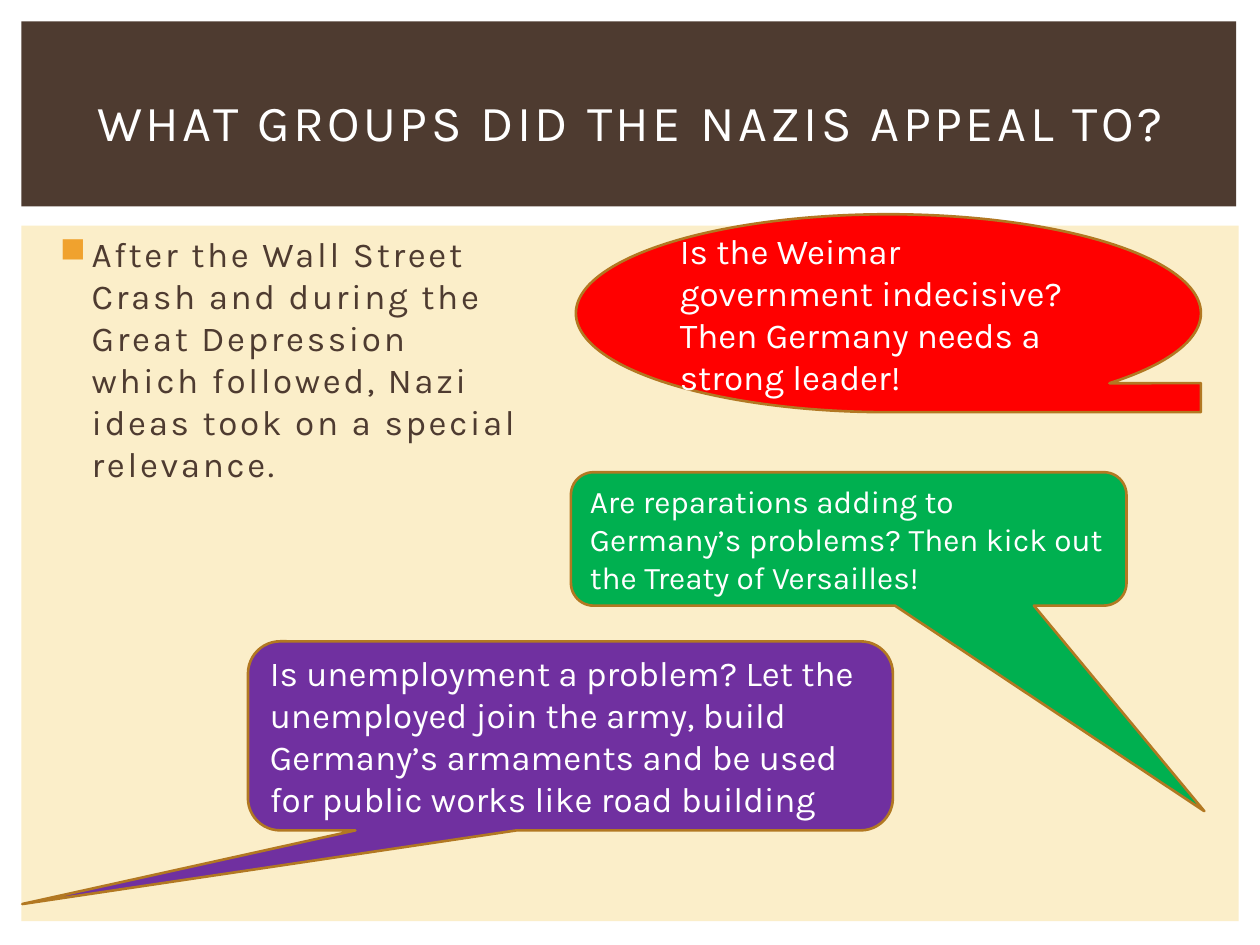
from collections import namedtuple

from lxml.etree import SubElement
from pptx import Presentation
from pptx.dml.color import RGBColor as RGB
from pptx.enum.shapes import MSO_SHAPE as SHAPE
from pptx.enum.text import MSO_ANCHOR as ANCHOR, PP_ALIGN as ALIGN
from pptx.oxml.ns import qn
from pptx.util import Cm, Pt

Theme = namedtuple("Theme", "font brown cream white amber outline red purple green "
                            "title_size body_size small_size")
theme = Theme("Karla", "4E3B30", "FBEEC9", "FFFFFF", "F0A22E", "B27822",
              "FF0000", "7030A0", "00B050", 28.8, 20, 18)

deck = Presentation()
deck.slide_width, deck.slide_height = Cm(25.4), Cm(19.05)
slide = deck.slides.add_slide(deck.slide_layouts[6])


def add_block(kind, box, fill, outline=None):
    block = slide.shapes.add_shape(kind, *map(Cm, box))
    block.shadow.inherit = False
    block.fill.solid()
    block.fill.fore_color.rgb = RGB.from_string(fill)
    if outline:
        block.line.color.rgb = RGB.from_string(outline)
        block.line.width = Pt(1.5)
    else:
        block.line.fill.background()
    return block


def write(holder, words, size, color, anchor, align=ALIGN.LEFT, spacing=0):
    frame = holder.text_frame
    frame.word_wrap = True
    frame.vertical_anchor = anchor
    paragraph = frame.paragraphs[0]
    paragraph.alignment = align
    run = paragraph.add_run()
    run.text = words
    run.font.name = theme.font
    run.font.size = Pt(size)
    run.font.color.rgb = RGB.from_string(color)
    if spacing:
        run.font._element.set("spc", str(int(spacing * 100)))
    return paragraph


add_block(SHAPE.RECTANGLE, (0.43, 4.55, 24.54, 14.02), theme.cream)
add_block(SHAPE.RECTANGLE, (0.43, 0.43, 24.49, 3.73), theme.brown)

title = slide.shapes.add_textbox(Cm(1.07), Cm(0.99), Cm(23.29), Cm(2.92))
write(title, "WHAT GROUPS DID THE NAZIS APPEAL TO?", theme.title_size, theme.white,
      ANCHOR.MIDDLE, ALIGN.CENTER, 2)

context = slide.shapes.add_textbox(Cm(0.84), Cm(4.57), Cm(9.86), Cm(12.7))
relevance = write(
    context,
    "After the Wall Street Crash and during the Great Depression which followed, "
    "Nazi ideas took on a special relevance.",
    theme.body_size, theme.brown, ANCHOR.TOP, spacing=1.5)
bullet = relevance._p.get_or_add_pPr()
bullet.set("marL", str(Cm(0.76)))
bullet.set("indent", str(Cm(-0.64)))
SubElement(SubElement(bullet, qn("a:buClr")), qn("a:srgbClr"), val=theme.amber)
SubElement(bullet, qn("a:buChar"), char="■")

appeals = [
    (SHAPE.FLOWCHART_SEQUENTIAL_ACCESS_STORAGE, (11.61, 4.32, 12.6, 3.99), (),
     theme.red, theme.body_size,
     "Is the Weimar government indecisive? Then Germany needs a strong leader!"),
    (SHAPE.ROUNDED_RECTANGULAR_CALLOUT, (5, 12.93, 13, 3.81), (-0.85, 0.89, 0.17),
     theme.purple, theme.body_size,
     "Is unemployment a problem? Let the unemployed join the army, build Germany’s "
     "armaments and be used for public works like road building"),
    (SHAPE.ROUNDED_RECTANGULAR_CALLOUT, (11.51, 9.52, 11.2, 2.69), (0.64, 2.04, 0.17),
     theme.green, theme.small_size,
     "Are reparations adding to Germany’s problems? Then kick out the Treaty of "
     "Versailles!"),
]
for kind, box, pointer, fill, size, words in appeals:
    bubble = add_block(kind, box, fill, theme.outline)
    for index, value in enumerate(pointer):
        bubble.adjustments[index] = value
    write(bubble, words, size, theme.white, ANCHOR.MIDDLE)

deck.save("out.pptx")
